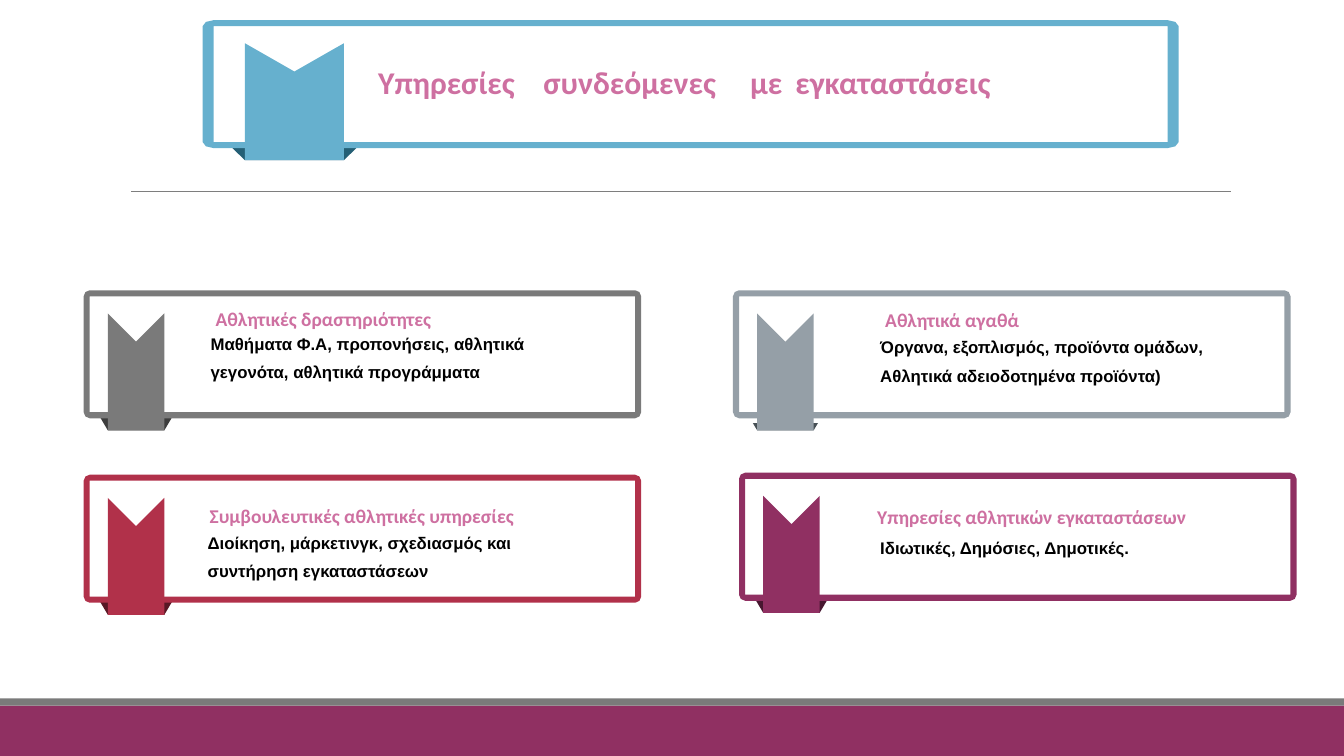
from dataclasses import dataclass

from pptx import Presentation
from pptx.dml.color import RGBColor
from pptx.enum.shapes import MSO_CONNECTOR as Connector, MSO_SHAPE as Preset
from pptx.oxml.ns import qn
from pptx.util import Inches, Pt


@dataclass(frozen=True)
class Theme:
    white: str = "FFFFFF"
    black: str = "000000"
    pink: str = "CE70A1"
    plum: str = "903062"
    gray: str = "7A7A7A"
    rule: str = "7E7E7E"
    heading_font: str = "Calibri"
    body_font: str = "Arial"
    title_size: float = 39
    heading_size: float = 24
    body_size: float = 12
    raised: int = 3000  # raised text is drawn smaller than its nominal size
    title_line: float = 27.5
    heading_line: float = 17.2
    body_line: float = 0.96
    body_gap: float = 6.4


THEME = Theme()

# (word, left, width)
TITLE = [
    ("Υπηρεσίες", 3.74, 1.64),
    ("συνδεόμενες", 5.38, 2.05),
    ("με", 7.43, 0.45),
    ("εγκαταστάσεις", 7.88, 2.3),
]
TITLE_TOP, TITLE_HEIGHT = 0.68, 0.39

BANNER = dict(
    left=2.01, top=0.2, width=9.68, side=0.11, ribbon_left=0.42, ribbon_width=0.98,
    fold=0.28, color="66B0CE", fold_color="245F75",
)
CARD = dict(width=5.53, side=0.06, ribbon_left=0.24, ribbon_width=0.56, fold=0.16)
CARDS = [
    dict(left=7.33, top=4.69, color=THEME.plum, fold_color="471730"),
    dict(left=0.83, top=2.88, color=THEME.gray, fold_color="3D3D3D"),
    dict(left=0.83, top=4.71, color="B1314A", fold_color="581825"),
    dict(left=7.27, top=2.88, color="959FA7", fold_color="475055", panel_shift=(-0.06, 0.11)),
]

# box (left, top, width, height), heading, heading indent, body lines, body indent, first gap
TEXTS = [
    ((2.08, 3.08, 3.33, 0.83), "Αθλητικές δραστηριότητες", 0.06,
     ["Μαθήματα Φ.Α, προπονήσεις, αθλητικά", "γεγονότα, αθλητικά προγράμματα"], 0.01, 0.2),
    ((8.72, 3.09, 3.61, 0.99), "Αθλητικά αγαθά", 0.06,
     ["Όργανα, εξοπλισμός, προϊόντα ομάδων,", "Αθλητικά αδειοδοτημένα προϊόντα)"], 0.01, 2.1),
    ((2.05, 5.03, 3.55, 0.76), "Συμβουλευτικές αθλητικές υπηρεσίες", 0.03,
     ["Διοίκηση, μάρκετινγκ, σχεδιασμός και", "συντήρηση εγκαταστάσεων"], 0.01, 1.9),
    ((8.69, 5.04, 3.72, 0.71), "Υπηρεσίες αθλητικών εγκαταστάσεων", 0.01,
     ["Ιδιωτικές, Δημόσιες, Δημοτικές."], 0.04, 4.6),
]

SLIDE_WIDTH, SLIDE_HEIGHT = 13.33, 7.5
FOOTER = [(7.0, 0.5, THEME.plum), (6.93, 0.07, THEME.gray)]  # top, height, color
RULE_LEFT, RULE_RIGHT, RULE_TOP = 1.3, 12.21, 1.9
FRAME_HEIGHT, FRAME_EDGE = 1.27, 0.06
RIBBON_DROP, RIBBON_HEIGHT, NOTCH = 0.23, 1.16, 0.28
FOLD_HEIGHT = 0.27


def paint(shape, color):
    shape.shadow.inherit = False
    shape.fill.solid()
    shape.fill.fore_color.rgb = RGBColor.from_string(color)
    shape.line.fill.background()


def outline(slide, color, *contours):
    """Draw one filled freeform from closed contours; an inner one cuts a hole."""
    builder = None
    for contour in contours:
        points = [(Inches(x), Inches(y)) for x, y in contour]
        if builder is None:
            builder = slide.shapes.build_freeform(*points[0], scale=1.0)
        else:
            builder.move_to(*points[0])
        builder.add_line_segments(points[1:], close=True)
    paint(builder.convert_to_shape(), color)


def corners(left, top, right, bottom):
    return [(left, top), (left, bottom), (right, bottom), (right, top)]


def softened(left, top, right, bottom, cut_x, cut_y):
    """Rectangle outline, clockwise, with each corner cut in two steps."""
    points = []
    for x, y, dx, dy in [(left, top, 1, 1), (right, top, -1, 1),
                         (right, bottom, -1, -1), (left, bottom, 1, -1)]:
        corner = [(x, y + dy * cut_y), (x + dx * cut_x * 0.3, y + dy * cut_y * 0.3),
                  (x + dx * cut_x, y)]
        points += corner if dx == dy else corner[::-1]
    return points


def add_ribbon_frame(slide, left, top, width, side, ribbon_left, ribbon_width,
                     fold, color, fold_color, panel_shift=(0, 0)):
    right, bottom = left + width, top + FRAME_HEIGHT
    start = left + ribbon_left
    end = start + ribbon_width
    ribbon_top = top + RIBBON_DROP
    ribbon_bottom = ribbon_top + RIBBON_HEIGHT
    fold_top = ribbon_bottom - FOLD_HEIGHT
    inner = corners(left + side, top + FRAME_EDGE, right - side, bottom - FRAME_EDGE)
    shift_x, shift_y = panel_shift

    outline(slide, fold_color, [(start, ribbon_bottom), (end, ribbon_bottom),
                                (end + fold, fold_top), (start - fold, fold_top)])
    outline(slide, THEME.white, [(x + shift_x, y + shift_y) for x, y in inner])
    outline(slide, color, softened(left, top, right, bottom, side, FRAME_EDGE), inner)
    outline(slide, color, [(start, ribbon_top), ((start + end) / 2, ribbon_top + NOTCH),
                           (end, ribbon_top), (end, ribbon_bottom), (start, ribbon_bottom)])


def add_text_frame(slide, left, top, width, height):
    box = slide.shapes.add_textbox(Inches(left), Inches(top), Inches(width), Inches(height))
    frame = box.text_frame
    frame.word_wrap = True
    frame.margin_left = frame.margin_right = frame.margin_top = frame.margin_bottom = 0
    return frame


def set_paragraph(paragraph, text, font_name, size, color, indent, before, spacing, raised=0):
    paragraph.text = text
    paragraph.space_before = Pt(before)
    paragraph.line_spacing = spacing
    properties = paragraph._p.get_or_add_pPr()
    properties.set("marL", str(Inches(indent)))
    properties.set("indent", "0")
    run = paragraph.runs[0]
    run.font.name = font_name
    run.font.size = Pt(size)
    run.font.bold = True
    run.font.color.rgb = RGBColor.from_string(color)
    if raised:
        run._r.get_or_add_rPr().set("baseline", str(raised))


def set_heading(paragraph, text, size, indent, before, line):
    set_paragraph(paragraph, text, THEME.heading_font, size, THEME.pink,
                  indent, before, Pt(line), THEME.raised)


def main():
    presentation = Presentation()
    presentation.slide_width = Inches(SLIDE_WIDTH)
    presentation.slide_height = Inches(SLIDE_HEIGHT)
    slide = presentation.slides.add_slide(presentation.slide_layouts[6])

    for top, height, color in FOOTER:
        band = slide.shapes.add_shape(Preset.RECTANGLE, 0, Inches(top),
                                      Inches(SLIDE_WIDTH), Inches(height))
        paint(band, color)

    rule = slide.shapes.add_connector(Connector.STRAIGHT, Inches(RULE_LEFT), Inches(RULE_TOP),
                                      Inches(RULE_RIGHT), Inches(RULE_TOP))
    rule.line.color.rgb = RGBColor.from_string(THEME.rule)
    rule.line.width = Pt(0.5)
    rule_properties = rule._element.spPr
    rule_properties.append(rule_properties.makeelement(qn("a:effectLst"), {}))

    for card in CARDS:
        add_ribbon_frame(slide, **CARD, **card)
    add_ribbon_frame(slide, **BANNER)

    for word, left, width in TITLE:
        frame = add_text_frame(slide, left, TITLE_TOP, width, TITLE_HEIGHT)
        set_heading(frame.paragraphs[0], word, THEME.title_size, 0.01, 1.4, THEME.title_line)

    for box, heading, heading_indent, lines, body_indent, first_gap in TEXTS:
        frame = add_text_frame(slide, *box)
        set_heading(frame.paragraphs[0], heading, THEME.heading_size, heading_indent,
                    0.9, THEME.heading_line)
        for index, line in enumerate(lines):
            set_paragraph(frame.add_paragraph(), line, THEME.body_font, THEME.body_size,
                          THEME.black, body_indent, THEME.body_gap if index else first_gap,
                          THEME.body_line)

    presentation.save("out.pptx")


if __name__ == "__main__":
    main()
